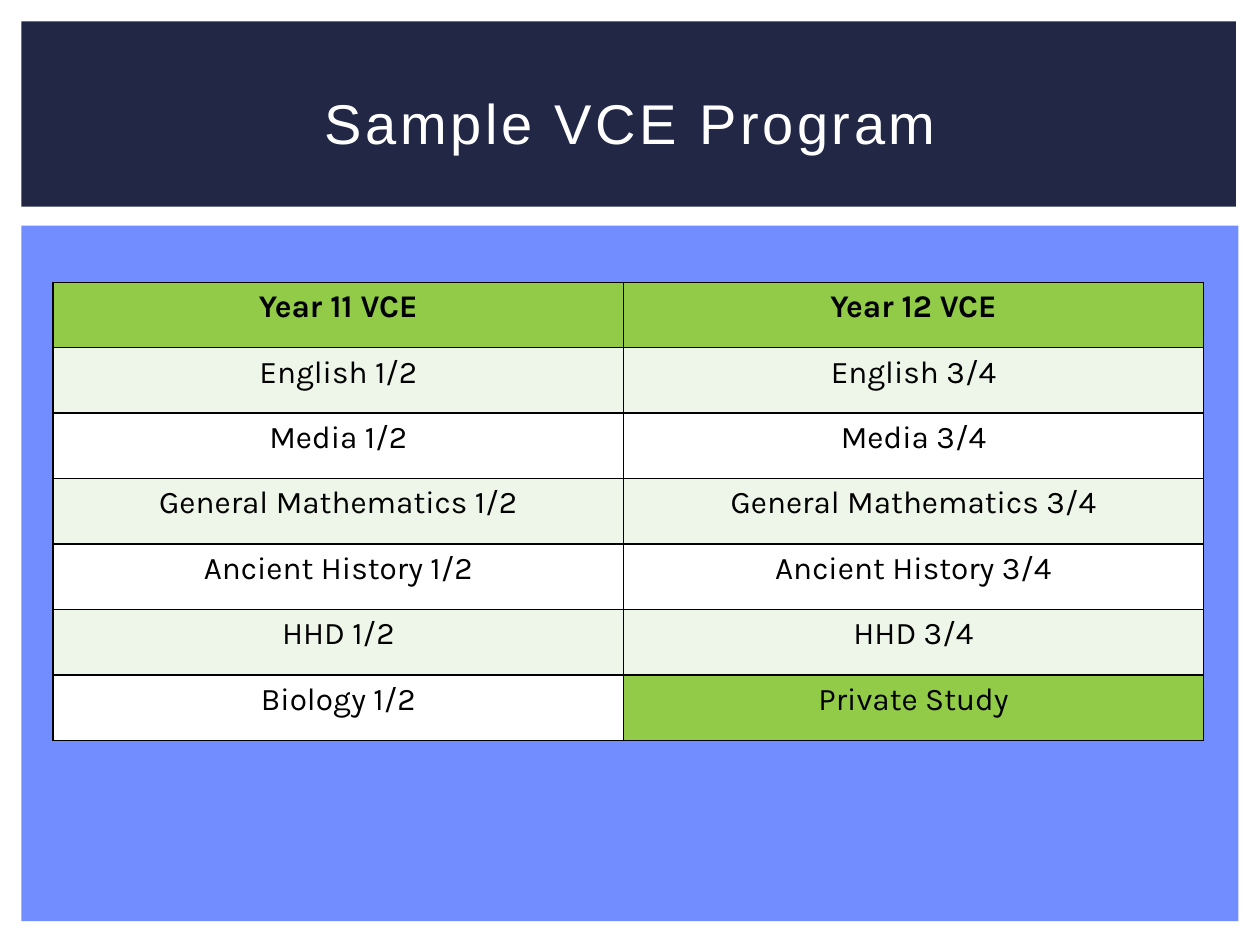
from pptx import Presentation
from pptx.dml.color import RGBColor
from pptx.enum.shapes import MSO_SHAPE
from pptx.enum.text import MSO_ANCHOR, PP_ALIGN
from pptx.util import Inches, Pt
from lxml.etree import SubElement
from pptx.oxml.ns import qn


def paint(fill, color):
    fill.solid()
    fill.fore_color.rgb = RGBColor.from_string(color)


def edge(cell):
    props = cell._tc.get_or_add_tcPr()
    for i, side in enumerate(("lnL", "lnR", "lnT", "lnB")):
        line = props.makeelement(qn("a:" + side), {"w": str(Pt(1))})
        solid = SubElement(line, qn("a:solidFill"))
        SubElement(solid, qn("a:srgbClr"), val="000000")
        props.insert(i, line)


GREEN, PALE, WHITE = "91CB48", "EEF6E9", "FFFFFF"

deck = Presentation()
deck.slide_width, deck.slide_height = Inches(10), Inches(7.5)
slide = deck.slides.add_slide(deck.slide_layouts[5])
shapes = slide.shapes
paint(slide.background.fill, WHITE)

# Body panel and title band
for top, width, height, color in (
    (1.79, 9.66, 5.52, "718DFF"),
    (0.17, 9.64, 1.47, "212745"),
):
    panel = shapes.add_shape(
        MSO_SHAPE.RECTANGLE, Inches(0.17), Inches(top), Inches(width), Inches(height)
    )
    panel.shadow.inherit = False
    paint(panel.fill, color)
    panel.line.fill.background()

# Program table
rows = [
    ("Year 11 VCE", "Year 12 VCE"),
    ("English 1/2", "English 3/4"),
    ("Media 1/2", "Media 3/4"),
    ("General Mathematics 1/2", "General Mathematics 3/4"),
    ("Ancient History 1/2", "Ancient History 3/4"),
    ("HHD 1/2", "HHD 3/4"),
    ("Biology 1/2", "Private Study"),
]
high = 0.52
table = shapes.add_table(
    len(rows), 2, Inches(0.42), Inches(2.24), Inches(9.13), Inches(high * len(rows))
).table
for col, width in zip(table.columns, (4.53, 4.6)):
    col.width = Inches(width)

for r, row in enumerate(rows):
    table.rows[r].height = Inches(high)
    for c, text in enumerate(row):
        cell = table.cell(r, c)
        cell.text = text
        if r == 0 or text == "Private Study":
            color = GREEN
        else:
            color = PALE if r % 2 else WHITE
        paint(cell.fill, color)
        edge(cell)
        para = cell.text_frame.paragraphs[0]
        para.alignment = PP_ALIGN.CENTER
        para.font.name = "Karla"
        para.font.size = Pt(18)
        para.font.bold = r == 0
        paint(para.font.fill, "000000")

# Title, brought in front of its band
title = shapes.title
title.left, title.top = Inches(0.42), Inches(0.39)
title.width, title.height = Inches(9.17), Inches(1.15)
title.text = "Sample VCE Program"
title.text_frame.vertical_anchor = MSO_ANCHOR.MIDDLE
para = title.text_frame.paragraphs[0]
para.alignment = PP_ALIGN.CENTER
para.font.name = "Arial"
para.font.size = Pt(32)
paint(para.font.fill, WHITE)
para.runs[0]._r.get_or_add_rPr().set("spc", "200")
shapes._spTree.append(title._element)

deck.save("out.pptx")
